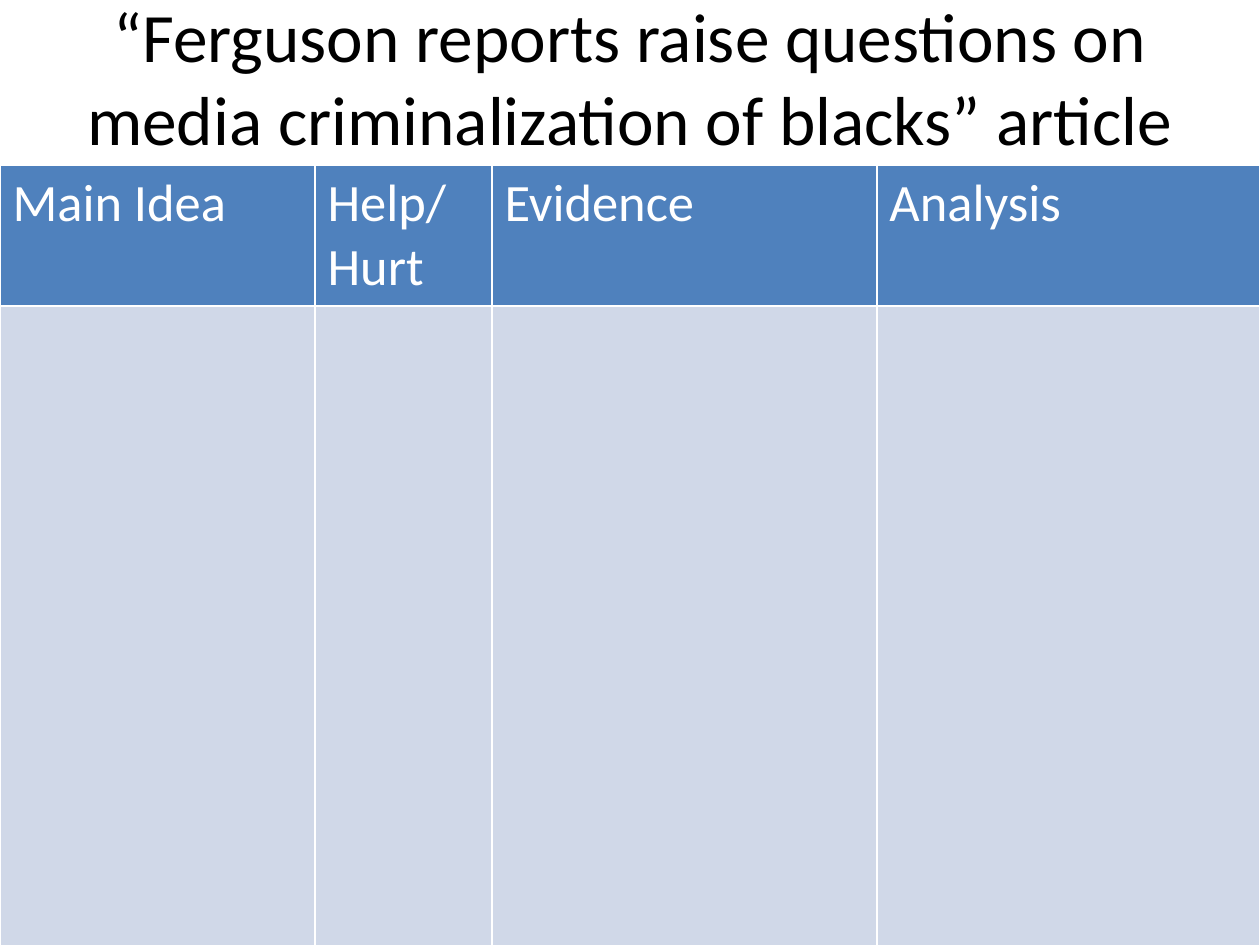
import pptx
import pptx.util
import pptx.dml.color
import pptx.enum.text

PX = 914400 // 126
COLORS = {"title": "000000", "head": "4F81BD", "body": "D0D8E8", "text": "FFFFFF"}
HEADS = ["Main Idea", "Help/Hurt", "Evidence", "Analysis"]
WIDTHS = [315, 177, 385, 383]
HEIGHTS = [82, 772]


def color(name):
    return pptx.dml.color.RGBColor.from_string(COLORS[name])


def style(par, size, name):
    par.font.name = "Calibri"
    par.font.size = pptx.util.Pt(size)
    par.font.bold = False
    par.font.color.rgb = color(name)


deck = pptx.Presentation()
deck.slide_width = pptx.util.Inches(10)
deck.slide_height = pptx.util.Inches(7.5)
slide = deck.slides.add_slide(deck.slide_layouts[5])

title = slide.shapes.title
title.left, title.top = 63 * PX, -3 * PX
title.width, title.height = 1134 * PX, 158 * PX
frame = title.text_frame
frame.text = "“Ferguson reports raise questions on media criminalization of blacks” article"
frame.word_wrap = True
frame.auto_size = pptx.enum.text.MSO_AUTO_SIZE.NONE
frame.vertical_anchor = pptx.enum.text.MSO_ANCHOR.MIDDLE
frame.paragraphs[0].alignment = pptx.enum.text.PP_ALIGN.CENTER
style(frame.paragraphs[0], 39.6, "title")

# The default table style supplies the white cell borders.
table = slide.shapes.add_table(
    len(HEIGHTS), len(HEADS), 0, 165 * PX, sum(WIDTHS) * PX, sum(HEIGHTS) * PX
).table
for row, height in zip(table.rows, HEIGHTS):
    row.height = height * PX
for col, (head, width) in enumerate(zip(HEADS, WIDTHS)):
    table.columns[col].width = width * PX
    table.cell(0, col).text = head
    for row, fill in enumerate(["head", "body"]):
        cell = table.cell(row, col)
        cell.fill.solid()
        cell.fill.fore_color.rgb = color(fill)
        style(cell.text_frame.paragraphs[0], 30, "text")

deck.save("out.pptx")
